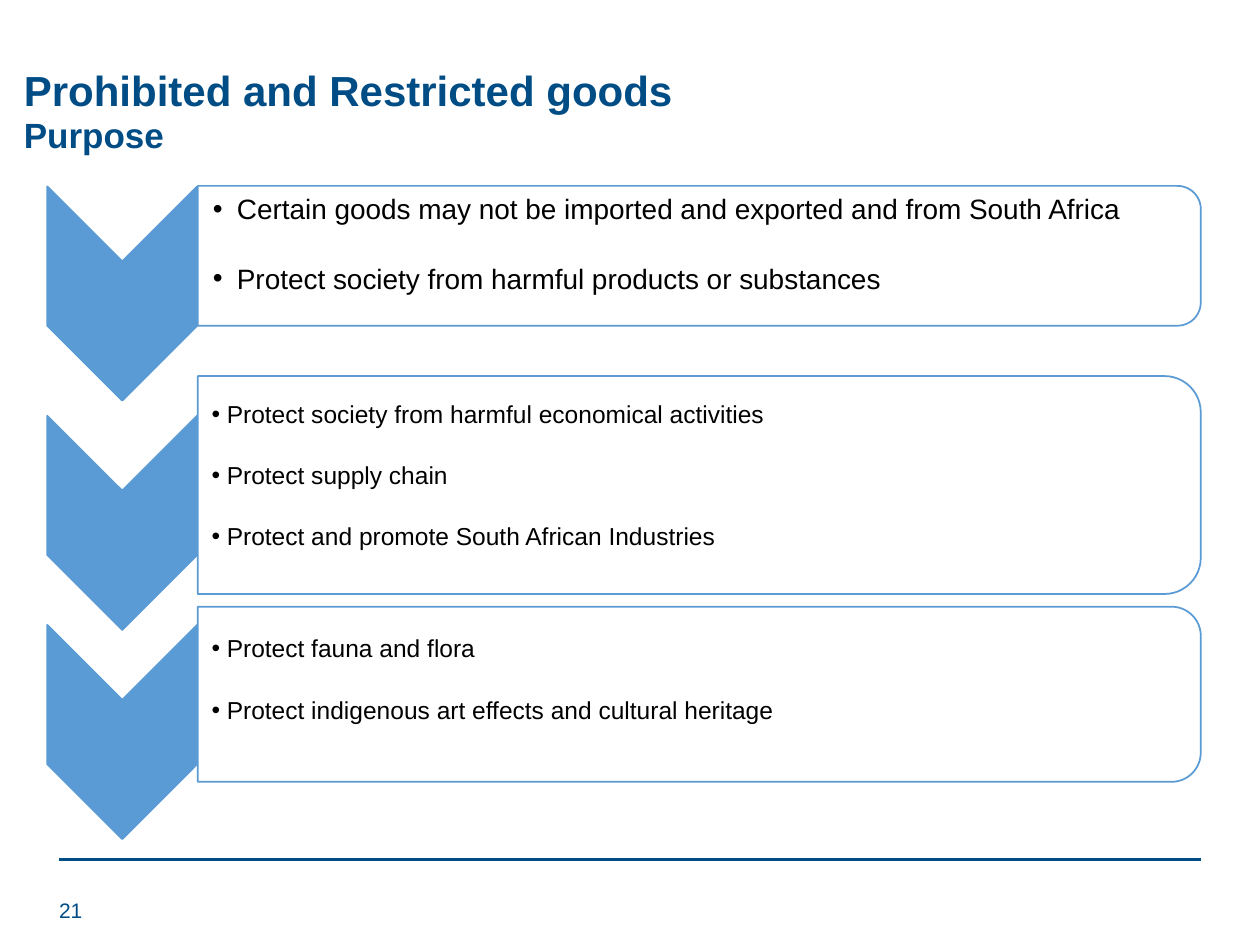
from lxml import etree
from pptx import Presentation
from pptx.dml.color import RGBColor
from pptx.enum import shapes, text
from pptx.oxml import ns
from pptx.util import Inches, Pt

NAVY, BLUE, WHITE, BLACK = "004C85", "5B9BD5", "FFFFFF", "000000"
PANEL_LEFT, PANEL_WIDTH = 1.57, 7.96
CHEVRON_CENTER, CHEVRON_LENGTH, CHEVRON_WIDTH = 0.97, 1.7, 1.19

PURPOSES = [
    dict(chevron_y=2.33, panel_y=2.03, height=1.11, text_top=1.55, size=16,
         indent=0.19, inset=0.12, gap=22.5, items=[
             "Certain goods may not be imported and exported and from South Africa",
             "Protect society from harmful products or substances"]),
    dict(chevron_y=4.15, panel_y=3.85, height=1.73, text_top=3.19, size=14,
         indent=0.12, inset=0.11, gap=19.8, items=[
             "Protect society from harmful economical activities",
             "Protect supply chain",
             "Protect and promote South African Industries"]),
    dict(chevron_y=5.81, panel_y=5.51, height=1.39, text_top=5.05, size=14,
         indent=0.12, inset=0.11, gap=20.2, items=[
             "Protect fauna and flora",
             "Protect indigenous art effects and cultural heritage"]),
]


def color(value):
    return RGBColor.from_string(value)


def add_element(parent, tag, **attributes):
    return etree.SubElement(parent, ns.qn(tag), attributes)


def add_text(slide, lines, left, top, width, height, size, fill=NAVY, bold=False,
             inset=0.1, top_inset=0, anchor=text.MSO_ANCHOR.TOP, spacing=0.9,
             gap=0, indent=None):
    frame = slide.shapes.add_textbox(
        Inches(left), Inches(top), Inches(width), Inches(height)).text_frame
    frame.word_wrap = True
    frame.vertical_anchor = anchor
    frame.margin_left = Inches(inset)
    frame.margin_top = Inches(top_inset)
    frame.margin_right = frame.margin_bottom = Inches(0.01)
    for index, line in enumerate(lines):
        paragraph = frame.paragraphs[0] if index == 0 else frame.add_paragraph()
        paragraph.line_spacing = spacing
        if index:
            paragraph.space_before = Pt(gap)
        if indent:
            properties = paragraph._p.get_or_add_pPr()
            properties.set("marL", str(Inches(indent)))
            properties.set("indent", str(-Inches(indent)))
            add_element(properties, "a:buFont", typeface="Arial")
            add_element(properties, "a:buChar", char="•")
        run = paragraph.add_run()
        run.text = line
        run.font.name = "Arial"
        run.font.size = Pt(size)
        run.font.bold = bold
        run.font.color.rgb = color(fill)


def add_rotated(slide, kind, center_x, center_y, width, height, fill):
    shape = slide.shapes.add_shape(
        kind, Inches(center_x - width / 2), Inches(center_y - height / 2),
        Inches(width), Inches(height))
    shape.rotation = 90
    shape.shadow.inherit = False
    shape.fill.solid()
    shape.fill.fore_color.rgb = color(fill)
    shape.line.color.rgb = color(BLUE)
    shape.line.width = Pt(1)
    return shape


def add_purpose(slide, row):
    add_rotated(slide, shapes.MSO_SHAPE.CHEVRON, CHEVRON_CENTER, row["chevron_y"],
                CHEVRON_LENGTH, CHEVRON_WIDTH, BLUE)
    panel = add_rotated(slide, shapes.MSO_SHAPE.ROUND_2_SAME_RECTANGLE,
                        PANEL_LEFT + PANEL_WIDTH / 2, row["panel_y"],
                        row["height"], PANEL_WIDTH, WHITE)
    fill = panel._element.spPr.find(ns.qn("a:solidFill"))
    add_element(fill[0], "a:alpha", val="90000")
    top = row["panel_y"] - row["height"] / 2 + 0.05
    add_text(slide, row["items"], PANEL_LEFT, top, PANEL_WIDTH - 0.07,
             row["height"] - 0.1, row["size"], fill=BLACK, inset=row["inset"],
             top_inset=row["text_top"] - top, gap=row["gap"], indent=row["indent"])


def main():
    presentation = Presentation()
    presentation.slide_width, presentation.slide_height = Inches(10), Inches(7.5)
    slide = presentation.slides.add_slide(presentation.slide_layouts[6])

    rule = slide.shapes.add_connector(shapes.MSO_CONNECTOR.STRAIGHT, Inches(0.47),
                                      Inches(6.82), Inches(9.53), Inches(6.82))
    rule.line.color.rgb = color(NAVY)
    rule.line.width = Pt(2)
    add_element(rule._element.spPr, "a:effectLst")

    add_text(slide, ["Prohibited and Restricted goods"], 0, 0.48, 9, 0.58, 24,
             bold=True, inset=0.19, top_inset=0.08)
    add_text(slide, ["21"], 0.37, 7.03, 2.25, 0.4, 12, spacing=1,
             anchor=text.MSO_ANCHOR.MIDDLE)
    add_text(slide, ["Purpose"], 0.09, 0.87, 8.91, 0.45, 20, bold=True, top_inset=0.07)
    for row in PURPOSES:
        add_purpose(slide, row)

    presentation.save("out.pptx")


if __name__ == "__main__":
    main()
